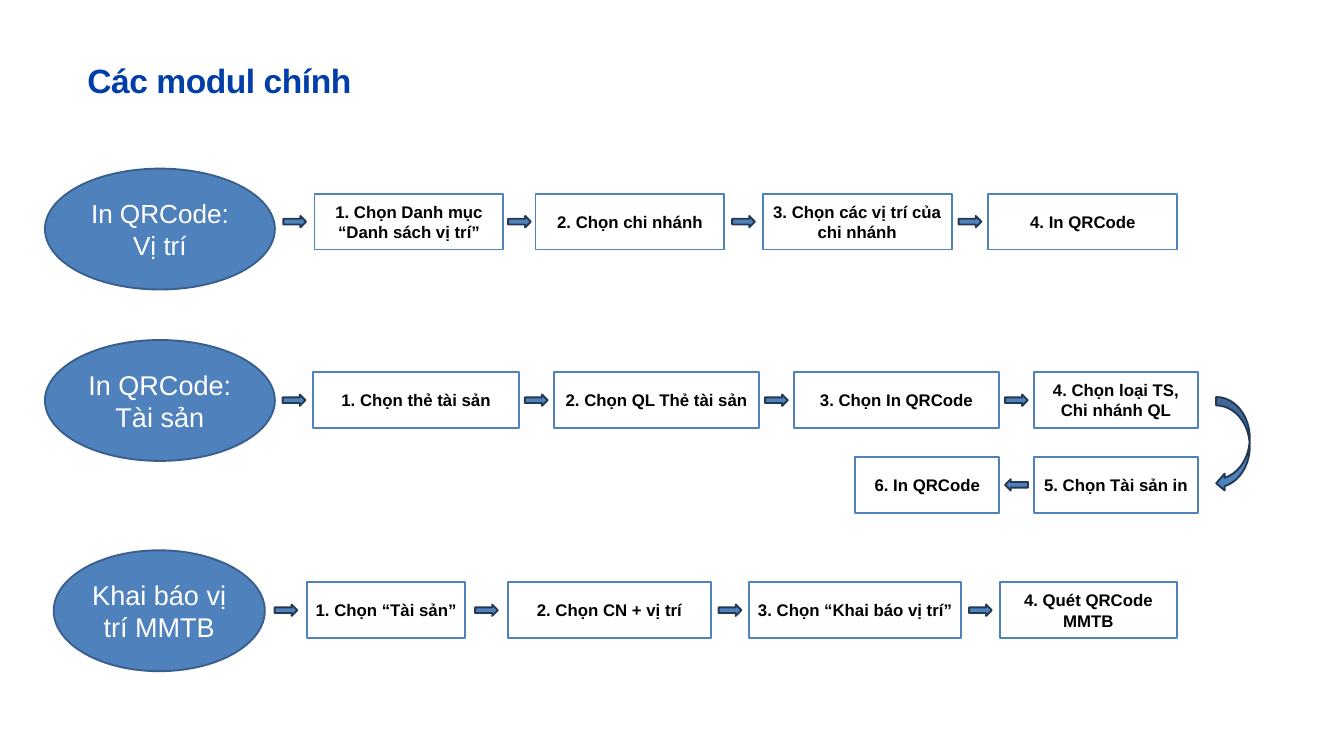
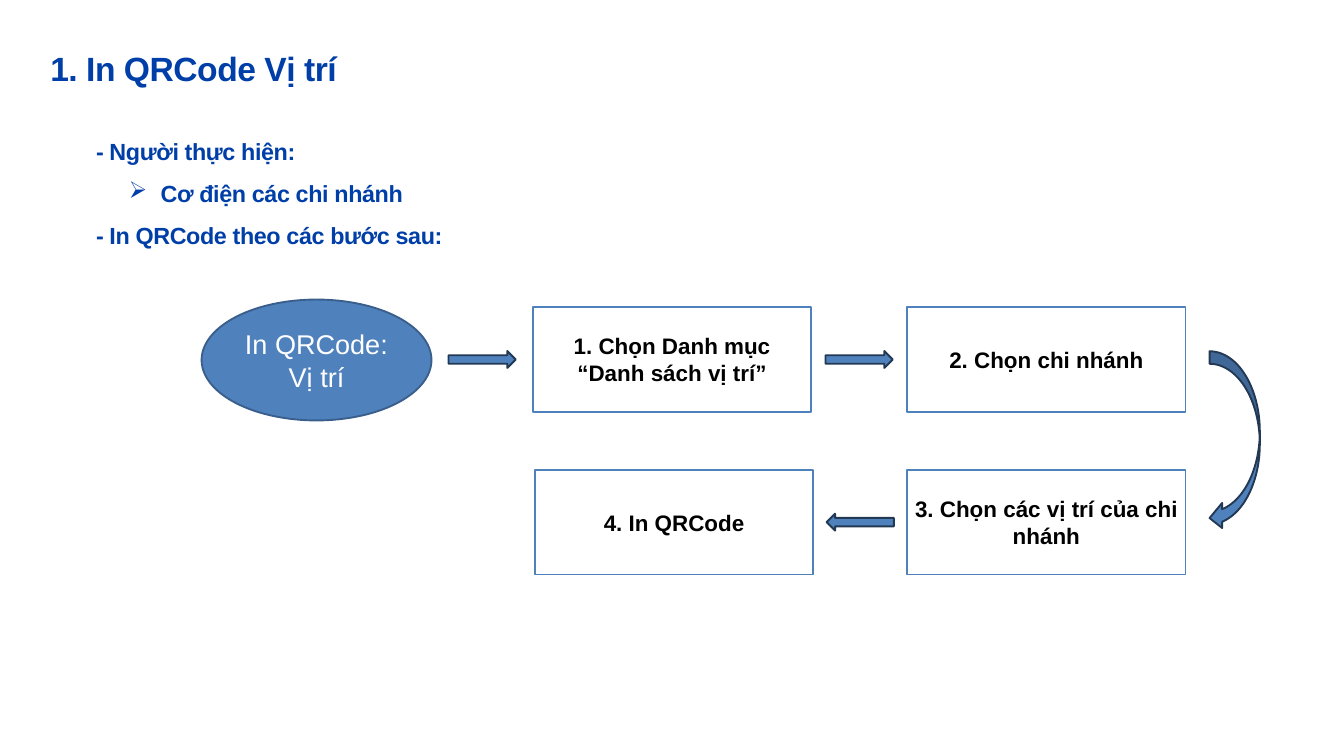
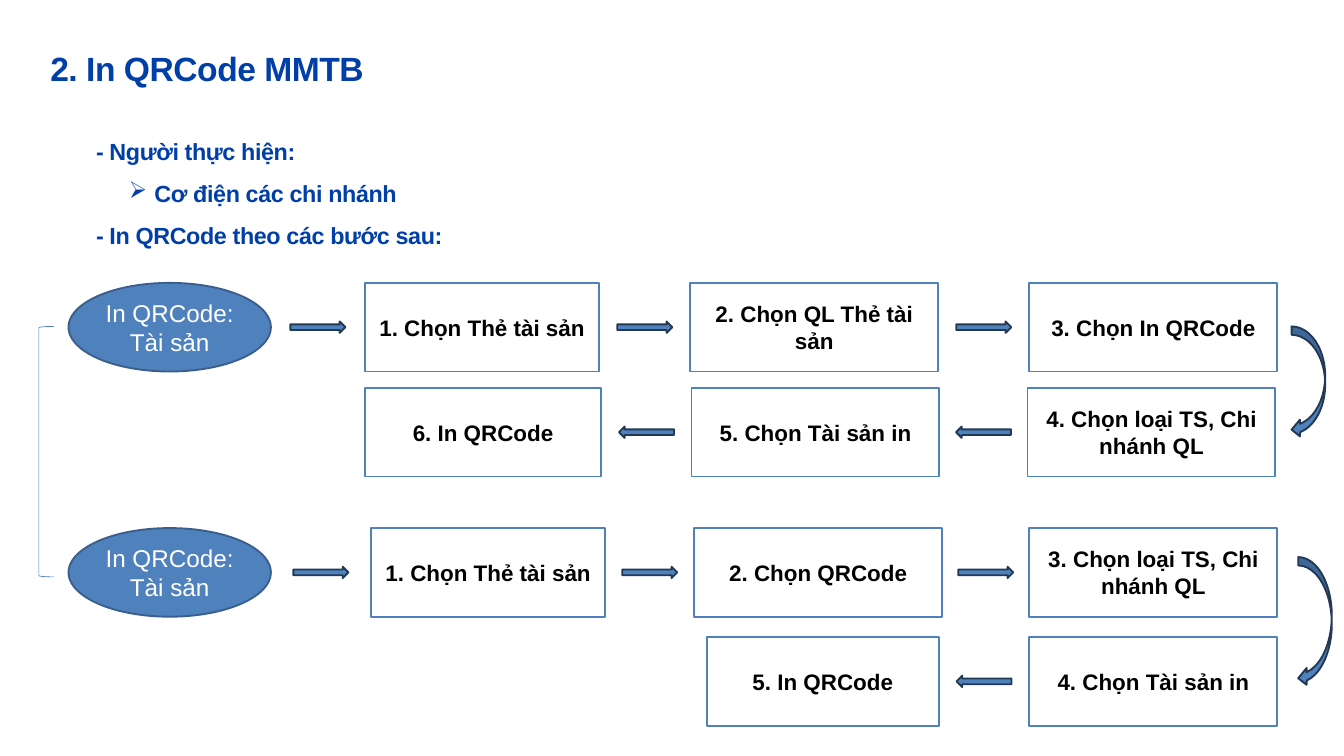
import dataclasses
import lxml.etree
import pptx
import pptx.dml.color
import pptx.enum.shapes
import pptx.enum.text
import pptx.oxml.ns
import pptx.util

Cm, Pt = pptx.util.Cm, pptx.util.Pt
RGB = pptx.dml.color.RGBColor.from_string
SHAPE = pptx.enum.shapes.MSO_SHAPE
ALIGN = pptx.enum.text.PP_ALIGN
ANCHOR = pptx.enum.text.MSO_ANCHOR
RIGHT, LEFT = SHAPE.RIGHT_ARROW, SHAPE.LEFT_ARROW


@dataclasses.dataclass(frozen=True)
class Theme:
    font: str = "Arial"
    heading: str = "003EA8"
    blue: str = "4F81BD"
    topic_line: str = "3A5F8C"
    arrow_line: str = "233953"
    bracket_line: str = "4B7EBC"
    white: str = "FFFFFF"
    black: str = "000000"
    title_size: int = 36
    body_size: int = 25


theme = Theme()


def style(p, size, color, bold=True, spacing=0):
    """Format a paragraph; spacing is in hundredths of a point."""
    p.font.name, p.font.size, p.font.bold = theme.font, Pt(size), bold
    p.font.color.rgb = RGB(color)
    if spacing:
        p._p.get_or_add_pPr().get_or_add_defRPr().set("spc", str(spacing))


def block(s, kind, left, top, width, height, fill, line, text="", size=18, color=theme.black):
    """Add an outlined shape with centred text; lengths in centimetres."""
    sp = s.shapes.add_shape(kind, Cm(left), Cm(top), Cm(width), Cm(height))
    sp.shadow.inherit = False
    sp.fill.solid()
    sp.fill.fore_color.rgb = RGB(fill)
    sp.line.color.rgb = RGB(line)
    sp.line.width = Pt(2)
    if text:
        tf = sp.text_frame
        tf.word_wrap, tf.vertical_anchor = True, ANCHOR.MIDDLE
        p = tf.paragraphs[0]
        p.text, p.alignment = text, ALIGN.CENTER
        style(p, size, color, bold=kind != SHAPE.OVAL)
    return sp


# Slide contents, in centimetres
# topic: left, middle, width, height, text size, text
# flow: arrow kind, arrow size, middle, box height, topic, steps (left, width, text)
# turn: left, top, width, height of a curved arrow
SMALL, LONG, THIN = (0.86, 0.43), (2.54, 0.64), (2.08, 0.43)
slides = [
    dict(
        title="Các modul chính", title_at=(3.3, 2.24), performer=None, step_size=18,
        flows=[
            (RIGHT, SMALL, 8.38, 2.11, (1.7, 8.66, 8.69, 4.57, 28, "In QRCode: Vị trí"), [
                (11.89, 7.14, "1. Chọn Danh mục “Danh sách vị trí”"),
                (20.24, 7.14, "2. Chọn chi nhánh"),
                (28.83, 7.14, "3. Chọn các vị trí của chi nhánh"),
                (37.36, 7.14, "4. In QRCode")]),
            (RIGHT, SMALL, 15.13, 2.11, (1.7, 15.14, 8.69, 4.57, 29, "In QRCode: Tài sản"), [
                (11.84, 7.77, "1. Chọn thẻ tài sản"),
                (20.93, 7.77, "2. Chọn QL Thẻ tài sản"),
                (30, 7.77, "3. Chọn In QRCode"),
                (39.07, 6.22, "4. Chọn loại TS, Chi nhánh QL")]),
            (LEFT, SMALL, 18.33, 2.11, None, [
                (32.33, 5.44, "6. In QRCode"),
                (39.07, 6.22, "5. Chọn Tài sản in")]),
            (RIGHT, SMALL, 23.07, 2.11, (2.03, 23.09, 7.98, 4.57, 29, "Khai báo vị trí MMTB"), [
                (11.61, 5.97, "1. Chọn “Tài sản”"),
                (19.2, 7.67, "2. Chọn CN + vị trí"),
                (28.32, 8, "3. Chọn “Khai báo vị trí”"),
                (37.8, 6.68, "4. Quét QRCode MMTB")]),
        ],
        turns=[(45.97, 15.01, 1.27, 3.58)],
    ),
    dict(
        title="1. In QRCode Vị trí", title_at=(1.9, 1.8),
        performer=" Cơ điện các chi nhánh", step_size=24,
        flows=[
            (RIGHT, LONG, 13.59, 3.96, (7.62, 13.61, 8.69, 4.57, 29, "In QRCode: Vị trí"), [
                (20.14, 10.52, "1. Chọn Danh mục “Danh sách vị trí”"),
                (34.29, 10.52, "2. Chọn chi nhánh")]),
            (LEFT, LONG, 19.74, 3.96, None, [
                (20.22, 10.52, "4. In QRCode"),
                (34.29, 10.52, "3. Chọn các vị trí của chi nhánh")]),
        ],
        turns=[(45.72, 13.28, 1.9, 6.78)],
    ),
    dict(
        title="2. In QRCode MMTB", title_at=(1.9, 1.8),
        performer="Cơ điện các chi nhánh", step_size=24,
        flows=[
            (RIGHT, THIN, 12.37, 3.35, (2.59, 12.37, 7.65, 3.35, 26, "In QRCode: Tài sản"), [
                (13.79, 8.86, "1. Chọn Thẻ tài sản"),
                (26.09, 9.37, "2. Chọn QL Thẻ tài sản"),
                (38.91, 9.37, "3. Chọn In QRCode")]),
            (LEFT, THIN, 16.34, 3.35, None, [
                (13.79, 8.94, "6. In QRCode"),
                (26.14, 9.37, "5. Chọn Tài sản in"),
                (38.84, 9.37, "4. Chọn loại TS, Chi nhánh QL")]),
            (RIGHT, THIN, 21.64, 3.35, (2.59, 21.64, 7.65, 3.35, 26, "In QRCode: Tài sản"), [
                (14.02, 8.86, "1. Chọn Thẻ tài sản"),
                (26.24, 9.37, "2. Chọn QRCode"),
                (38.91, 9.37, "3. Chọn loại TS, Chi nhánh QL")]),
            (LEFT, THIN, 25.76, 3.35, None, [
                (26.72, 8.76, "5. In QRCode"),
                (38.91, 9.37, "4. Chọn Tài sản in")]),
        ],
        turns=[(48.82, 12.34, 1.27, 4.22), (49.07, 21.06, 1.27, 4.9)],
    ),
]

prs = pptx.Presentation()
prs.slide_width, prs.slide_height = Cm(50.8), Cm(28.58)

for content in slides:
    s = prs.slides.add_slide(prs.slide_layouts[5])

    # Title
    sp = s.shapes.title
    sp.left, sp.top = (Cm(v) for v in content["title_at"])
    sp.width, sp.height = Cm(18.72), Cm(1.47)
    tf = sp.text_frame
    tf.margin_left = tf.margin_right = tf.margin_top = tf.margin_bottom = 0
    tf.vertical_anchor, tf.auto_size = ANCHOR.TOP, pptx.enum.text.MSO_AUTO_SIZE.NONE
    p = tf.paragraphs[0]
    p.text, p.alignment, p.line_spacing = content["title"], ALIGN.LEFT, Pt(43.5)
    style(p, theme.title_size, theme.heading, spacing=-50)

    # Who does it, and the lead-in to the steps
    if content["performer"]:
        tf = s.shapes.add_textbox(Cm(3.63), Cm(4.65), Cm(18), Cm(6.22)).text_frame
        tf.margin_left = tf.margin_right = tf.margin_top = tf.margin_bottom = 0
        tf.word_wrap = True
        tf.text = "\n".join(["- Người thực hiện:", content["performer"],
                             "- In QRCode theo các bước sau:"])
        for p in tf.paragraphs:
            p.line_spacing = 1.5
            style(p, theme.body_size, theme.heading, spacing=-40)
        p = tf.paragraphs[1]
        p.level = 1
        pPr = p._p.get_or_add_pPr()
        pPr.set("marL", str(Cm(2.21)))
        pPr.set("indent", str(Cm(-0.97)))
        bullet = lxml.etree.Element(pptx.oxml.ns.qn("a:buChar"), char="➢")
        pPr.get_or_add_defRPr().addprevious(bullet)

    # Flows: topic, step boxes, and an arrow centred in every gap
    for arrow, (arrow_w, arrow_h), middle, height, topic, steps in content["flows"]:
        spans = [(left, left + width) for left, width, text in steps]
        if topic:
            left, topic_middle, width, topic_h, size, text = topic
            block(s, SHAPE.OVAL, left, topic_middle - topic_h / 2, width, topic_h,
                  theme.blue, theme.topic_line, text, size, theme.white)
            spans.insert(0, (left, left + width))
        for left, width, text in steps:
            block(s, SHAPE.RECTANGLE, left, middle - height / 2, width, height,
                  theme.white, theme.blue, text, content["step_size"])
        for (_, gap_start), (gap_end, _) in zip(spans, spans[1:]):
            block(s, arrow, (gap_start + gap_end - arrow_w) / 2, middle - arrow_h / 2,
                  arrow_w, arrow_h, theme.blue, theme.arrow_line)

    # Curved arrows to the next row
    for turn in content["turns"]:
        block(s, SHAPE.CURVED_LEFT_ARROW, *turn, theme.blue, theme.arrow_line)

# Bracket joining the two ways on the last slide
bracket = block(s, SHAPE.LEFT_BRACKET, 1.47, 12.34, 0.58, 9.47, theme.white, theme.bracket_line)
bracket.fill.background()
bracket.line.width = Pt(0.75)

prs.save("out.pptx")
